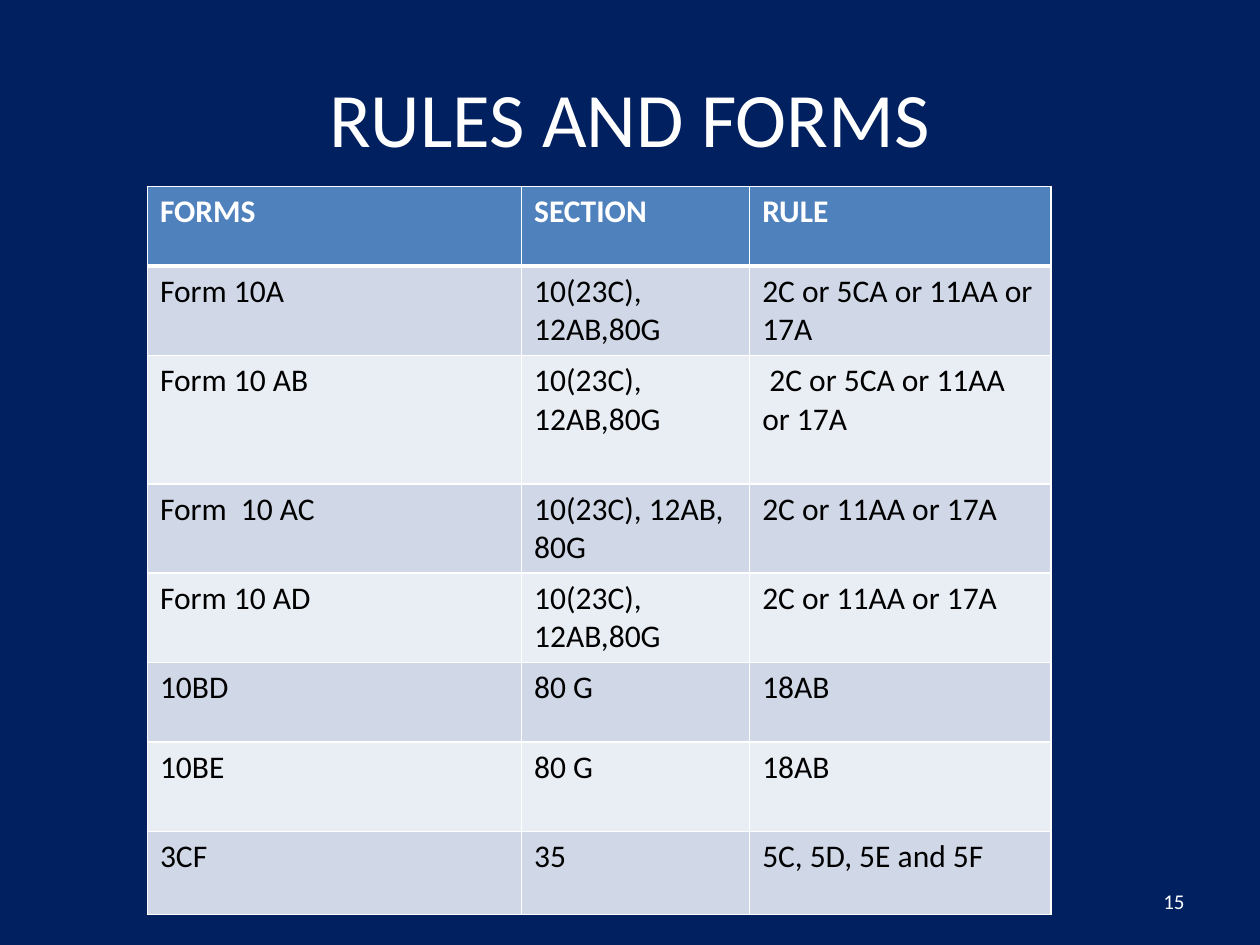
"""Build the slide that lists forms with their sections and rules."""
from lxml import etree
from pptx import Presentation
from pptx import util as u
from pptx.dml.color import RGBColor
from pptx.enum import text
from pptx.oxml import ns

NAVY = RGBColor(0x00, 0x20, 0x60)
WHITE = RGBColor(0xFF, 0xFF, 0xFF)
BLACK = RGBColor(0x00, 0x00, 0x00)
BLUE = RGBColor(0x4F, 0x81, 0xBD)
BANDS = (RGBColor(0xE9, 0xED, 0xF4), RGBColor(0xD0, 0xD8, 0xE8))

COLUMN_WIDTHS = (2.97, 1.81, 2.39)
ROW_HEIGHTS = (0.63, 0.71, 1.02, 0.71, 0.71, 0.63, 0.71, 0.66)
FORMS = (
    ("FORMS", "SECTION", "RULE"),
    ("Form 10A", "10(23C), 12AB,80G", "2C or 5CA or 11AA or 17A"),
    ("Form 10 AB", "10(23C), 12AB,80G", " 2C or 5CA or 11AA or 17A"),
    ("Form  10 AC", "10(23C), 12AB, 80G", "2C or 11AA or 17A"),
    ("Form 10 AD", "10(23C), 12AB,80G", "2C or 11AA or 17A"),
    ("10BD", "80 G", "18AB"),
    ("10BE", "80 G", "18AB"),
    ("3CF", "35", "5C, 5D, 5E and 5F"),
)


class SlideBuilder:
    """Hold the style and the current slide."""

    font = "Calibri"

    def __init__(self, deck, background):
        self.page = deck.slides.add_slide(deck.slide_layouts[5])
        self.page.background.fill.solid()
        self.page.background.fill.fore_color.rgb = background

    def set_text(self, frame, words, size, color, align, bold=False):
        frame.text = words
        frame.word_wrap = True
        for para in frame.paragraphs:
            para.alignment = align
            for span in para.runs:
                span.font.name = self.font
                span.font.size = u.Pt(size)
                span.font.bold = bold
                span.font.color.rgb = color

    def title(self, words, left, top, width, height):
        box = self.page.shapes.title
        box.left, box.top = u.Inches(left), u.Inches(top)
        box.width, box.height = u.Inches(width), u.Inches(height)
        box.text_frame.vertical_anchor = text.MSO_ANCHOR.MIDDLE
        self.set_text(box.text_frame, words, 44, WHITE, text.PP_ALIGN.CENTER)

    def label(self, words, left, top, width, height):
        box = self.page.shapes.add_textbox(
            u.Inches(left), u.Inches(top), u.Inches(width), u.Inches(height))
        box.text_frame.vertical_anchor = text.MSO_ANCHOR.MIDDLE
        self.set_text(box.text_frame, words, 12, WHITE, text.PP_ALIGN.RIGHT)

    def border(self, cell, side, points):
        properties = cell._tc.get_or_add_tcPr()
        line = etree.SubElement(properties, ns.qn(f"a:ln{side}"), w=str(u.Pt(points)))
        fill = etree.SubElement(line, ns.qn("a:solidFill"))
        etree.SubElement(fill, ns.qn("a:srgbClr"), val=str(WHITE))

    def table(self, rows, left, top, widths, heights):
        grid = self.page.shapes.add_table(
            len(rows), len(widths), u.Inches(left), u.Inches(top),
            u.Inches(sum(widths)), u.Inches(sum(heights))).table
        for column, width in zip(grid.columns, widths):
            column.width = u.Inches(width)
        for index, (row, height) in enumerate(zip(rows, heights)):
            grid.rows[index].height = u.Inches(height)
            header = index == 0
            lines = {"L": 1, "R": 1, "T": 3 if index == 1 else 1, "B": 3 if header else 1}
            for cell, words in zip(grid.rows[index].cells, row):
                for side, points in lines.items():
                    self.border(cell, side, points)
                cell.fill.solid()
                cell.fill.fore_color.rgb = BLUE if header else BANDS[index % 2]
                self.set_text(cell.text_frame, words, 18, WHITE if header else BLACK,
                              text.PP_ALIGN.LEFT, header)


def main():
    deck = Presentation()
    deck.slide_width, deck.slide_height = u.Inches(10), u.Inches(7.5)
    slide = SlideBuilder(deck, NAVY)
    slide.title("RULES AND FORMS", 0.5, 0.3, 9, 1.25)
    slide.label("15", 7.17, 6.95, 2.33, 0.4)
    slide.table(FORMS, 1.17, 1.48, COLUMN_WIDTHS, ROW_HEIGHTS)
    deck.save("out.pptx")


if __name__ == "__main__":
    main()
